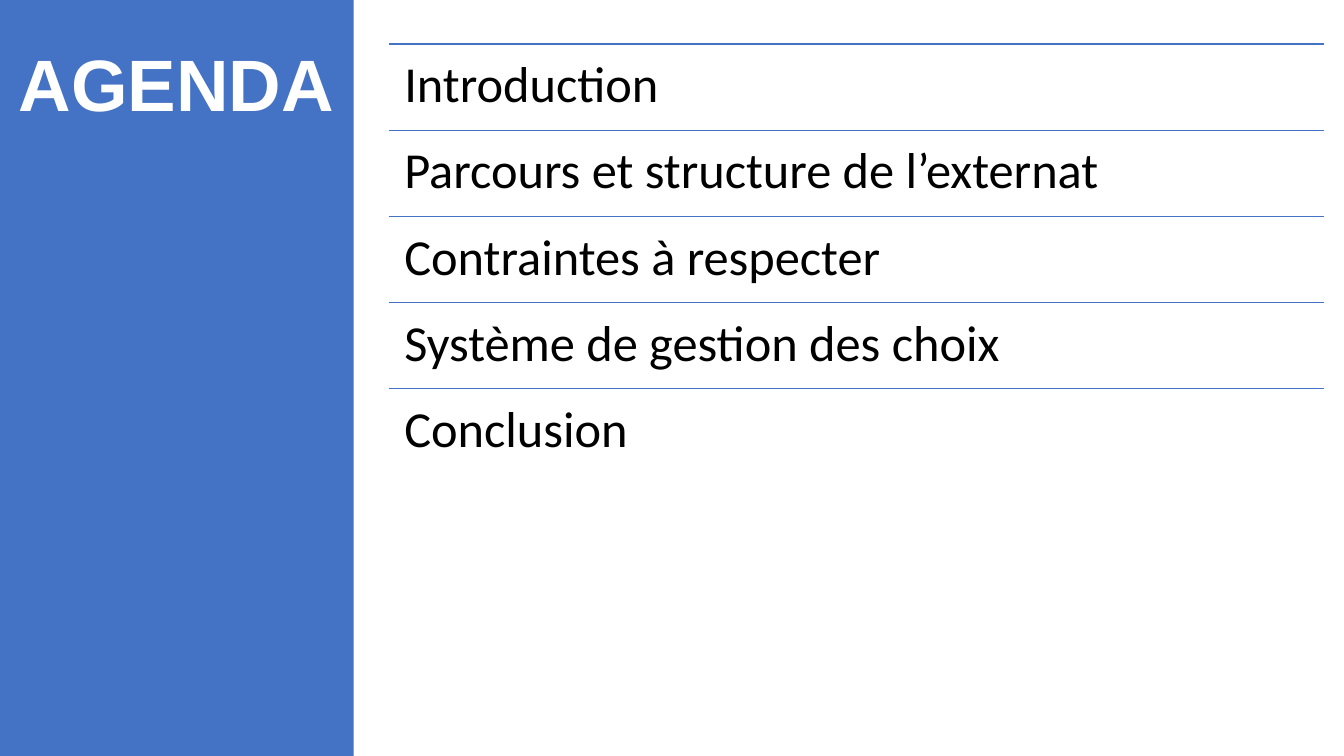
"""Build the agenda slide: a blue title band and a ruled list of topics."""
from lxml import etree
from pptx import Presentation
from pptx.dml.color import RGBColor
from pptx.enum.shapes import MSO_CONNECTOR, MSO_SHAPE
from pptx.enum.text import MSO_ANCHOR, PP_ALIGN
from pptx.oxml.ns import qn
from pptx.util import Pt

TITLE = "AGENDA"
TOPICS = [
    "Introduction",
    "Parcours et structure de l’externat",
    "Contraintes à respecter",
    "Système de gestion des choix",
    "Conclusion",
]
BLUE, WHITE, BLACK = "4472C4", "FFFFFF", "000000"
SLIDE_WIDTH, SLIDE_HEIGHT = 960, 540
BAND_WIDTH = 252.6
TITLE_BOX = (-5.8, 31.5, 263.5, 194.4)
LIST_LEFT, LIST_TOP, LIST_WIDTH, ROW_HEIGHT = 278, 31.5, 668, 61.55


def paint(color_format, color):
    color_format.rgb = RGBColor.from_string(color)


def add_text(slide, box, text, font_name, size, color, bold=False,
             align=PP_ALIGN.LEFT, insets=(7.2, 3.6)):
    frame = slide.shapes.add_textbox(*map(Pt, box)).text_frame
    frame.word_wrap = True
    frame.vertical_anchor = MSO_ANCHOR.TOP
    frame.margin_left = frame.margin_right = Pt(insets[0])
    frame.margin_top = frame.margin_bottom = Pt(insets[1])
    paragraph = frame.paragraphs[0]
    paragraph.alignment = align
    paragraph.line_spacing = 0.9
    run = paragraph.add_run()
    run.text = text
    run.font.name, run.font.size, run.font.bold = font_name, Pt(size), bold
    paint(run.font.color, color)


def add_rule(slide, top):
    rule = slide.shapes.add_connector(
        MSO_CONNECTOR.STRAIGHT,
        Pt(LIST_LEFT), Pt(top), Pt(LIST_LEFT + LIST_WIDTH), Pt(top))
    rule.line.width = Pt(1)
    paint(rule.line.color, BLUE)
    etree.SubElement(rule.element.spPr, qn("a:effectLst"))


def main():
    deck = Presentation()
    deck.slide_width, deck.slide_height = Pt(SLIDE_WIDTH), Pt(SLIDE_HEIGHT)
    slide = deck.slides.add_slide(deck.slide_layouts[6])

    band = slide.shapes.add_shape(
        MSO_SHAPE.RECTANGLE, 0, 0, Pt(BAND_WIDTH), Pt(SLIDE_HEIGHT))
    band.shadow.inherit = False
    band.fill.solid()
    paint(band.fill.fore_color, BLUE)
    band.line.fill.background()
    add_text(slide, TITLE_BOX, TITLE, "Arial", 52, WHITE, bold=True,
             align=PP_ALIGN.CENTER)

    for row, topic in enumerate(TOPICS):
        top = LIST_TOP + row * ROW_HEIGHT
        add_rule(slide, top)
        add_text(slide, (LIST_LEFT, top, LIST_WIDTH, ROW_HEIGHT), topic,
                 "Calibri", 36, BLACK, insets=(10.8, 10.8))

    deck.save("out.pptx")


if __name__ == "__main__":
    main()
